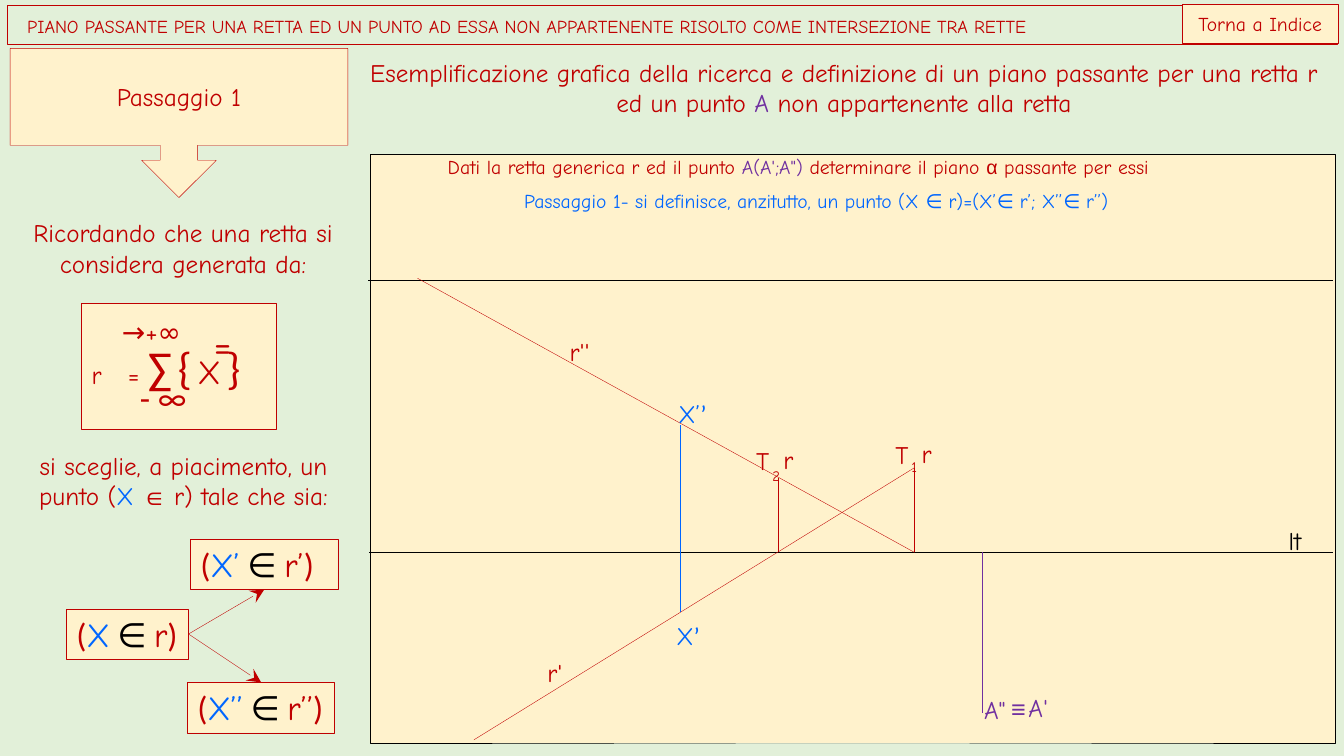
from lxml.etree import SubElement
from pptx import Presentation
from pptx.dml.color import RGBColor
from pptx.enum.shapes import MSO_CONNECTOR as Link, MSO_SHAPE as Preset
from pptx.enum.text import MSO_ANCHOR as Anchor, MSO_AUTO_SIZE as Fit, PP_ALIGN as Align
from pptx.oxml.ns import qn
from pptx.util import Pt

PX = 9144
RED, BLUE, PURPLE, BLACK = "C00000", "0066FF", "7030A0", "000000"
CREAM, GREEN = "FFF2CC", "E2F0D9"
HAND, SANS, SYMBOL = "Comic Neue", "Calibri", "Arial"
HAIRLINE = 0.25


def hue(value):
    return RGBColor.from_string(value)


def inside(box, left, top, width, height):
    return box[0] + left, box[1] + top, width, height


def write(shape, spans, size=18, color=RED, font=HAND, align=Align.LEFT, anchor=Anchor.TOP,
          inset=(10, 5, 10, 5), wrap=True, grow=True, spacing=None, baseline=0, tab=0):
    frame = shape.text_frame
    frame.word_wrap = wrap
    frame.auto_size = Fit.SHAPE_TO_FIT_TEXT if grow else Fit.NONE
    frame.vertical_anchor = anchor
    left, top, right, bottom = (PX * length for length in inset)
    frame.margin_left, frame.margin_top = left, top
    frame.margin_right, frame.margin_bottom = right, bottom
    para = frame.paragraphs[0]
    para.alignment = align
    para.line_spacing = spacing
    if tab:
        stops = SubElement(para._p.get_or_add_pPr(), qn("a:tabLst"))
        SubElement(stops, qn("a:tab"), pos=str(tab * PX), algn="l")
    for text, look in [(spans, {})] if isinstance(spans, str) else spans:
        span = para.add_run()
        span.text = text
        span.font.size = Pt(look.get("size", size))
        span.font.name = look.get("font", font)
        span.font.color.rgb = hue(look.get("color", color))
        if baseline:
            span.font._element.set("baseline", str(baseline * 1000))


def note(page, box, spans, fill=None, **style):
    shape = page.shapes.add_textbox(*(PX * length for length in box))
    if fill:
        shape.fill.solid()
        shape.fill.fore_color.rgb = hue(fill)
    write(shape, spans, **style)


def panel(page, box, preset=Preset.RECTANGLE, fill=CREAM, line=RED, weight=HAIRLINE):
    shape = page.shapes.add_shape(preset, *(PX * length for length in box))
    shape.shadow.inherit = False
    if fill:
        shape.fill.solid()
        shape.fill.fore_color.rgb = hue(fill)
    else:
        shape.fill.background()
    shape.line.color.rgb = hue(line)
    shape.line.width = Pt(weight)
    return shape


def segment(page, start, end, color=RED):
    line = page.shapes.add_connector(Link.STRAIGHT, *(PX * place for place in (*start, *end)))
    line.line.color.rgb = hue(color)
    line.line.width = Pt(HAIRLINE)
    SubElement(line._element.spPr, qn("a:effectLst"))
    return line


def arrow(page, source, source_side, target, target_side):
    line = segment(page, (0, 0), (0, 0))
    line.begin_connect(source, source_side)
    line.end_connect(target, target_side)
    SubElement(line.line._get_or_add_ln(), qn("a:tailEnd"), type="stealth", w="lg", len="lg")


def header(page, box):
    title = panel(page, box, fill=None)
    write(title, "PIANO PASSANTE PER UNA RETTA ED UN PUNTO AD ESSA NON APPARTENENTE "
          "RISOLTO COME INTERSEZIONE TRA RETTE", size=13, anchor=Anchor.MIDDLE,
          inset=(20, 10, 10, 5), grow=False, spacing=0.9)
    button = panel(page, inside(box, 1166, -1, 154, 39))
    write(button, "Torna a Indice", size=14, align=Align.CENTER, anchor=Anchor.MIDDLE)


def explanation(page, box):
    step = panel(page, inside(box, 3, 0, 335, 148), Preset.DOWN_ARROW_CALLOUT)
    write(step, "Passaggio 1", align=Align.CENTER, anchor=Anchor.MIDDLE, grow=False)
    note(page, inside(box, 0, 163, 349, 71),
         "Ricordando che una retta si considera generata da:", align=Align.CENTER)
    formula(page, inside(box, 74, 253, 193, 125))
    note(page, inside(box, 0, 394, 350, 71), [
        ("si sceglie, a piacimento, un punto (", {}), ("X ", {"color": BLUE}),
        ("∈ ", {"font": SYMBOL}), ("r) tale che sia:", {})], align=Align.CENTER)
    membership(page, inside(box, 59, 487, 270, 192))


def formula(page, box):
    large, gap = {"size": 32, "font": SANS}, {"font": SANS}
    write(panel(page, box, weight=0.75), [
        ("r\t= ", {}), ("∑", large), (" ", gap), ("{", large), (" ", gap),
        ("X", {"size": 24}), (" ", gap), ("}", large)],
        anchor=Anchor.MIDDLE, grow=False, tab=36)
    note(page, inside(box, 30, 6, 86, 44), "→+∞", size=20, anchor=Anchor.MIDDLE)
    note(page, inside(box, 48, 68, 76, 50), "- ∞", size=24, font=SANS)
    note(page, inside(box, 121, 12, 36, 28), "=", size=28)


def membership(page, box):
    boxes = []
    for left, top, width, mark in [(0, 69, 121, ""), (120, 142, 146, "’’"), (123, 0, 146, "’")]:
        member = panel(page, inside(box, left, top, width, 50))
        write(member, [
            ("(", {"font": SANS}), (f"X{mark}", {"color": BLUE}),
            (" ∈ ", {"font": SANS, "color": BLACK}), (f"r{mark}", {}), (")", {"font": SANS})],
            size=24, inset=(10, 5, 0, 5), grow=False)
        boxes.append(member)
    point, second, first = boxes
    arrow(page, point, 3, first, 2)
    arrow(page, point, 3, second, 0)


def drawing(page, box):
    panel(page, box, line=BLACK)
    labels = [
        ("T", 383, 289, 17, {}), ("2", 399, 293, 10, {"baseline": -25}), ("r", 410, 288, 12, {}),
        ("T", 521, 283, 17, {}), ("1", 537, 285, 8, {"baseline": -25}), ("r", 547, 282, 8, {}),
        ("r'", 176, 499, 22, {}), ("r''", 198, 181, 32, {}),
        ("A'", 653, 534, 28, {"color": PURPLE}), ("A\"", 609, 536, 29, {"color": PURPLE}),
        ("≡", 636, 535, 14, {"color": PURPLE, "font": SYMBOL}),
        ("lt", 911, 368, 29, {"color": BLACK})]
    for text, left, top, width, look in labels:
        note(page, inside(box, left, top, width, 30), text, fill=CREAM,
             inset=(0, 0, 0, 0), wrap=False, **look)

    ground, upper, right = 395, 125, 955
    trace_1, trace_2, point_a, point_x = 540, 405, 607, 308
    lines = [
        ((-1, ground), (right, ground), BLACK), ((-2, upper), (right, upper), BLACK),
        ((47, 123), (trace_1, ground), RED), ((103, 581), (trace_1, 311), RED),
        ((trace_2, ground), (trace_2, 321), RED), ((trace_1, ground), (trace_1, 311), RED),
        ((point_a, 554), (point_a, ground), PURPLE),
        ((point_x, 269), (point_x, 454), BLUE)]
    for start, end, color in lines:
        segment(page, inside(box, *start, 0, 0)[:2], inside(box, *end, 0, 0)[:2], color)

    note(page, inside(box, 77, 1, 781, 24), [
        ("Dati la retta generica r ed il punto ", {}), ("A(A';A\") ", {"color": PURPLE}),
        ("determinare il piano ", {}), ("α", {"font": SYMBOL}), (" passante per essi", {})],
        size=14, inset=(0, 0, 0, 0))
    note(page, inside(box, 143, 30, 634, 34),
         "Passaggio 1- si definisce, anzitutto, un punto (X ∈ r)=(X’∈ r’; X’’∈ r’’)",
         size=14, color=BLUE)
    for left, top, name in [(294, 458, "X"), (296, 237, "X’")]:
        note(page, inside(box, left, top, 54, 40), [(name, {}), ("’", {"font": SANS})], color=BLUE)


def heading(page, box):
    note(page, box, [
        ("Esemplificazione grafica della ricerca e definizione di un piano passante "
         "per una retta r ed un punto ", {}),
        ("A", {"color": PURPLE}), (" non appartenente alla retta", {})], align=Align.CENTER)


def main():
    deck = Presentation()
    deck.slide_width, deck.slide_height = 1333 * PX, 750 * PX
    page = deck.slides.add_slide(deck.slide_layouts[6])
    page.background.fill.solid()
    page.background.fill.fore_color.rgb = hue(GREEN)
    heading(page, (345, 52, 984, 71))
    drawing(page, (367, 153, 957, 584))
    explanation(page, (7, 48, 350, 679))
    header(page, (7, 5, 1319, 39))
    deck.save("out.pptx")


if __name__ == "__main__":
    main()
